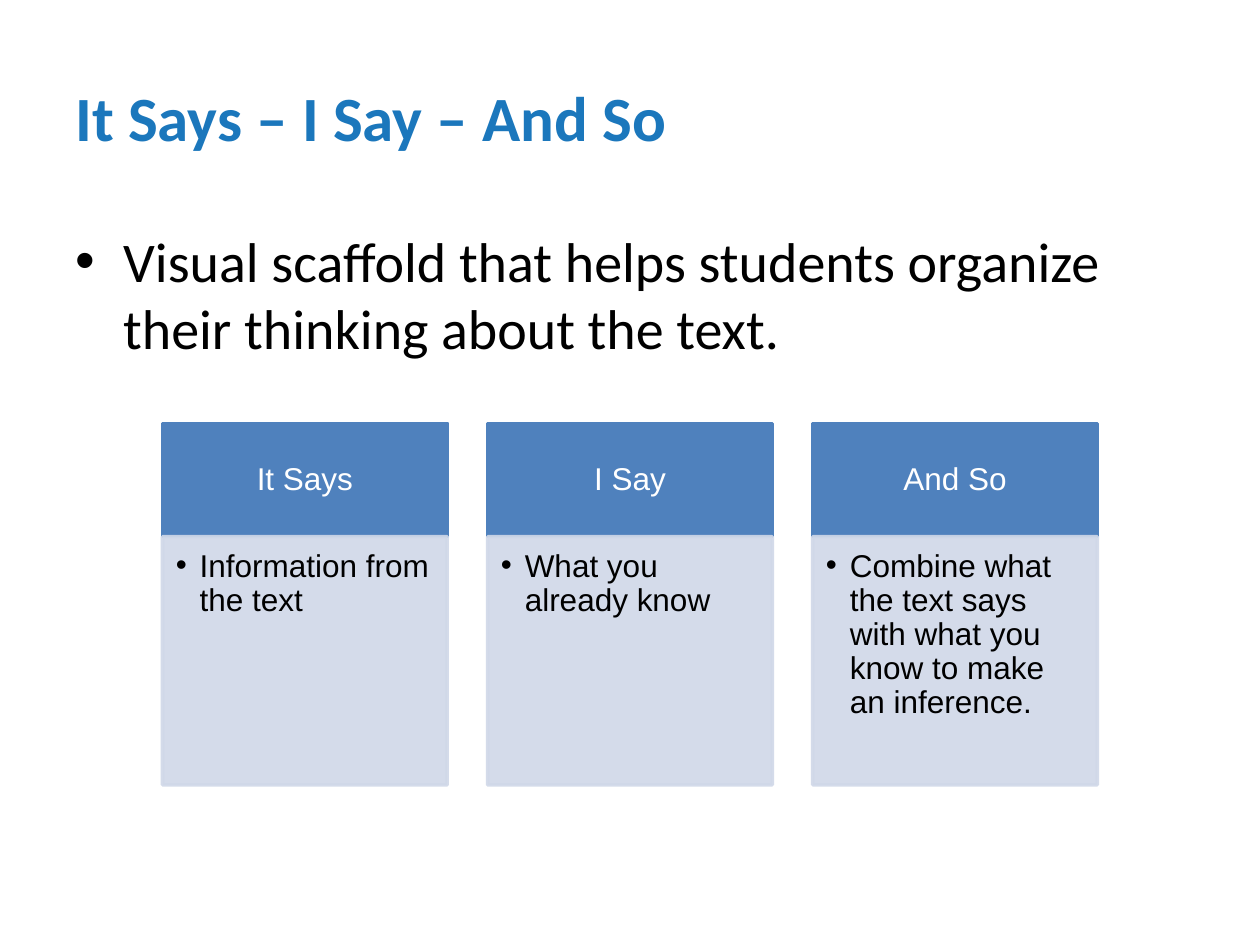
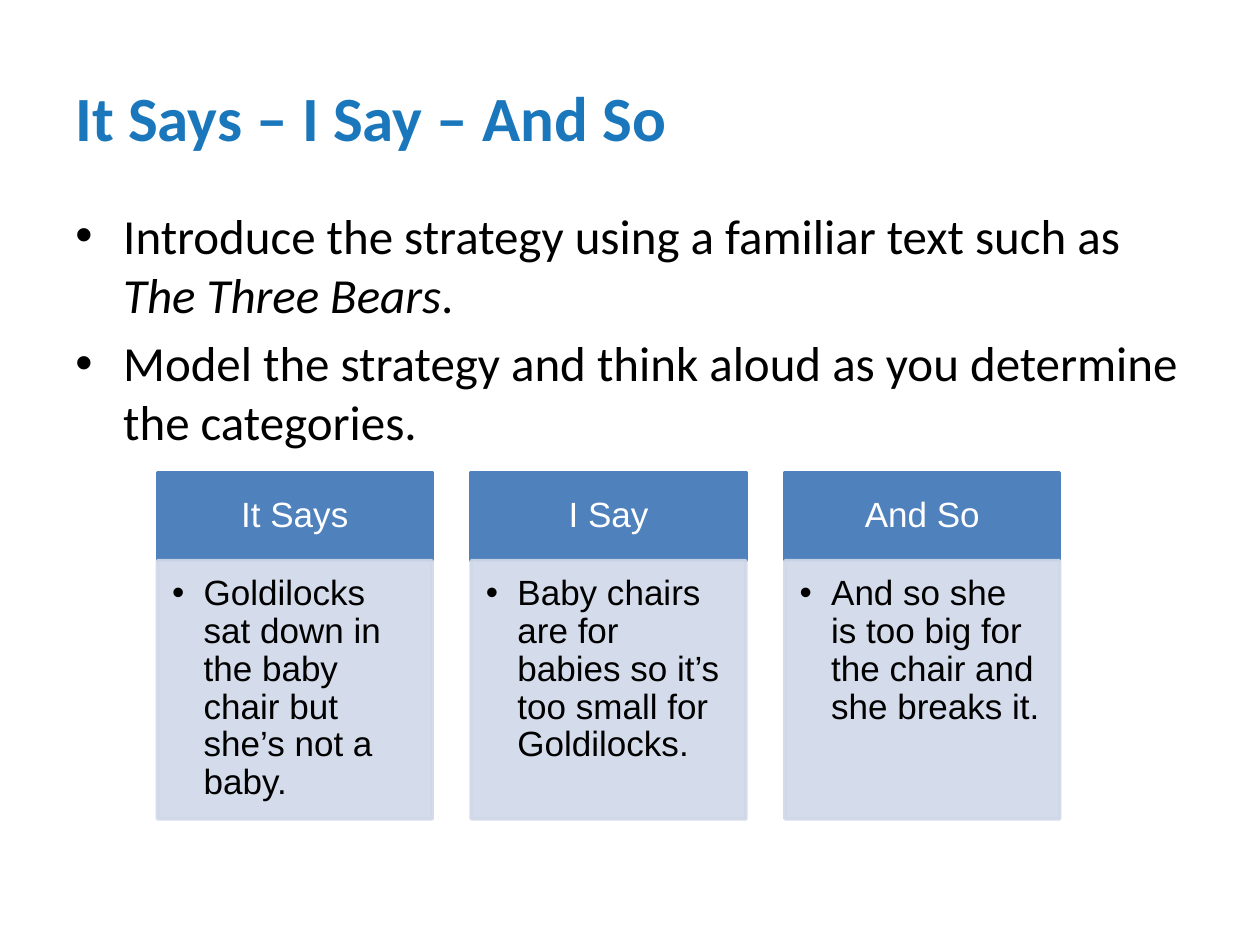
from dataclasses import dataclass

from lxml import etree
from pptx import Presentation
from pptx.dml.color import RGBColor
from pptx.enum.shapes import MSO_SHAPE
from pptx.enum.text import MSO_ANCHOR, PP_ALIGN
from pptx.oxml.ns import qn
from pptx.util import Inches, Pt

RECTANGLE = MSO_SHAPE.RECTANGLE
TOP, MIDDLE = MSO_ANCHOR.TOP, MSO_ANCHOR.MIDDLE
LEFT, CENTER = PP_ALIGN.LEFT, PP_ALIGN.CENTER


@dataclass(frozen=True)
class Theme:
    """Colours, fonts and type sizes shared by the slides."""
    title_blue: RGBColor = RGBColor(0x1B, 0x77, 0xBC)
    header_blue: RGBColor = RGBColor(0x4F, 0x81, 0xBD)
    panel_blue: RGBColor = RGBColor(0xD0, 0xD8, 0xE8)
    black: RGBColor = RGBColor(0, 0, 0)
    white: RGBColor = RGBColor(255, 255, 255)
    text_font: str = "Calibri"
    column_font: str = "Arial"
    title_size: int = 36
    panel_opacity: int = 90


@dataclass(frozen=True)
class Columns:
    """Placement in inches and type size of a row of columns."""
    left: float
    top: float
    width: float
    pitch: float
    header_height: float
    panel_height: float
    size: int
    indent: float


THEME = Theme()
TITLE = "It Says – I Say – And So"
HEADINGS = TITLE.split(" – ")


def style_font(para, name, size, color, bold=False):
    """Set the font of a whole paragraph."""
    font = para.font
    font.name, font.size, font.bold = name, Pt(size), bold
    font.color.rgb = color


def add_bullet(para, indent):
    """Give a paragraph a hanging round bullet."""
    properties = para._p.get_or_add_pPr()
    properties.set("marL", str(Inches(indent)))
    properties.set("indent", str(-Inches(indent)))
    etree.SubElement(properties, qn("a:buFont")).set("typeface", "Arial")
    etree.SubElement(properties, qn("a:buChar")).set("char", "•")


def add_text_box(page, top, height, anchor):
    """Add a wrapping text box across the page and return its frame."""
    box = page.shapes.add_textbox(Inches(0.5), Inches(top), Inches(9), Inches(height))
    frame = box.text_frame
    frame.word_wrap = True
    frame.vertical_anchor = anchor
    return frame


def add_title(page):
    """Add the slide title."""
    para = add_text_box(page, 0.3, 1.25, MIDDLE).paragraphs[0]
    para.text = TITLE
    style_font(para, THEME.text_font, THEME.title_size, THEME.title_blue, bold=True)


def add_bullet_list(page, top, size, items):
    """Add bulleted items, each a list of (text, italic) spans."""
    frame = add_text_box(page, top, 4.95, TOP)
    for index, spans in enumerate(items):
        para = frame.add_paragraph() if index else frame.paragraphs[0]
        add_bullet(para, 0.38)
        if index:
            para.space_before = Pt(0.2 * size)
        style_font(para, THEME.text_font, size, THEME.black)
        for text, italic in spans:
            span = para.add_run()
            span.text = text
            if italic:
                span.font.italic = True


def set_opacity(box, percent):
    """Make the fill and the line of a box partly transparent."""
    for color in box._element.spPr.iter(qn("a:srgbClr")):
        etree.SubElement(color, qn("a:alpha")).set("val", str(percent * 1000))


def add_block(page, left, top, width, height, color, anchor, margins):
    """Add a plain rectangle with margins in points and return it."""
    box = page.shapes.add_shape(RECTANGLE, Inches(left), Inches(top), Inches(width), Inches(height))
    box.shadow.inherit = False
    box.fill.solid()
    box.fill.fore_color.rgb = color
    box.line.color.rgb = color
    box.line.width = Pt(2)
    frame = box.text_frame
    frame.word_wrap = True
    frame.vertical_anchor = anchor
    frame.margin_left, frame.margin_top, frame.margin_right, frame.margin_bottom = map(Pt, margins)
    return box


def write_block(box, text, size, color, align, indent=None):
    """Write one paragraph in a block, bulleted if an indent is given."""
    para = box.text_frame.paragraphs[0]
    para.text = text
    para.alignment = align
    para.line_spacing = 0.9
    if indent:
        add_bullet(para, indent)
    style_font(para, THEME.column_font, size, color)


def add_columns(page, layout, texts):
    """Add a header over a bulleted panel for each heading."""
    side = 0.56 * layout.size
    near = 0.75 * side
    for index, (heading, text) in enumerate(zip(HEADINGS, texts)):
        left = layout.left + index * layout.pitch
        header = add_block(page, left, layout.top, layout.width, layout.header_height,
                           THEME.header_blue, MIDDLE, (side, side * 4 / 7, side, side * 4 / 7))
        write_block(header, heading, layout.size, THEME.white, CENTER)
        panel = add_block(page, left, layout.top + layout.header_height, layout.width,
                          layout.panel_height, THEME.panel_blue, TOP,
                          (near, near, side, 1.5 * near))
        set_opacity(panel, THEME.panel_opacity)
        write_block(panel, text, layout.size, THEME.black, LEFT, layout.indent)


def add_page(deck):
    """Add a blank slide with the shared title."""
    page = deck.slides.add_slide(deck.slide_layouts[6])
    add_title(page)
    return page


def main():
    """Build and save the two slides."""
    deck = Presentation()
    deck.slide_width, deck.slide_height = Inches(10), Inches(7.5)

    page = add_page(deck)
    add_bullet_list(page, 1.75, 32, [
        [("Visual scaffold that helps students organize their thinking about the text.", False)],
    ])
    add_columns(page, Columns(1.29, 3.36, 2.26, 2.58, 0.9, 1.97, 18, 0.19), [
        "Information from the text",
        "What you already know",
        "Combine what the text says with what you know to make an inference.",
    ])

    page = add_page(deck)
    add_bullet_list(page, 1.58, 28, [
        [("Introduce the strategy using a familiar text such as ", False),
         ("The Three Bears", True), (".", False)],
        [("Model the strategy and think aloud as you determine the categories.", False)],
    ])
    add_columns(page, Columns(1.25, 3.75, 2.18, 2.49, 0.7, 2.05, 20, 0.25), [
        "Goldilocks sat down in the baby chair but she’s not a baby.",
        "Baby chairs are for babies so it’s too small for Goldilocks.",
        "And so she is too big for the chair and she breaks it.",
    ])

    deck.save("out.pptx")


if __name__ == "__main__":
    main()
